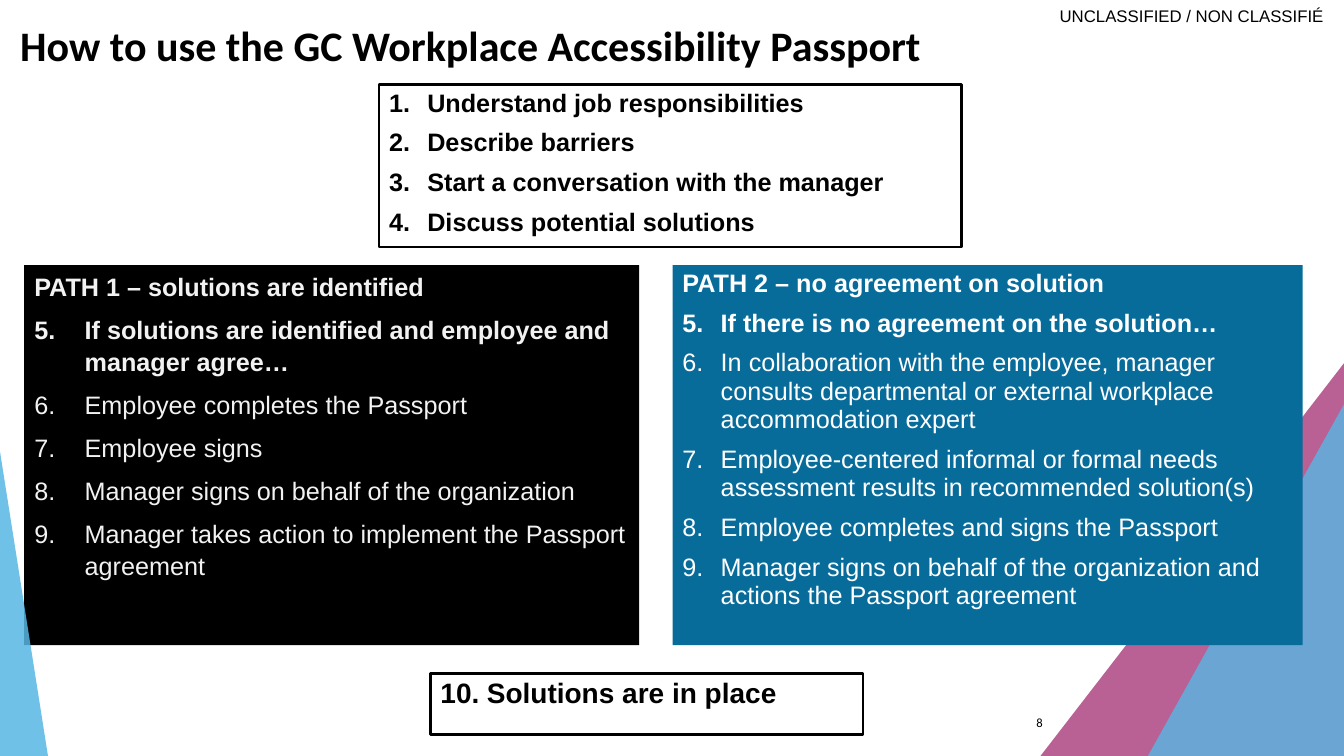
from lxml.etree import SubElement
from pptx import Presentation
from pptx.dml.color import RGBColor
from pptx.enum.shapes import MSO_SHAPE
from pptx.enum.text import MSO_ANCHOR, PP_ALIGN
from pptx.oxml.ns import qn
from pptx.util import Inches, Pt

WIDTH, HEIGHT = 13.33, 7.5
PATH_TOP, PATH_HEIGHT = 2.63, 3.77

TITLE = "How to use the GC Workplace Accessibility Passport"
CLASSIFICATION = "UNCLASSIFIED / NON CLASSIFIÉ"
PAGE = "8"

TRIANGLES = [
    ((10.25, 3.59, 3.09, 4), 1, "9E246B", 72),
    ((11.34, 4.01, 1.99, 3.57), 1, "58B7E3", 80),
    ((0, 4.48, 0.49, 3.11), 0, "58B7E3", 85),
]
FIRST_STEPS = [
    "Understand job responsibilities",
    "Describe barriers",
    "Start a conversation with the manager",
    "Discuss potential solutions",
]
AGREED_HEADING = "PATH 1 – solutions are identified"
AGREED_STEPS = [
    "If solutions are identified and employee and manager agree…",
    "Employee completes the Passport",
    "Employee signs",
    "Manager signs on behalf of the organization",
    "Manager takes action to implement the Passport agreement",
]
DISPUTED_HEADING = "PATH 2 – no agreement on solution"
DISPUTED_STEPS = [
    "If there is no agreement on the solution…",
    "In collaboration with the employee, manager consults departmental or external workplace "
    "accommodation expert",
    "Employee-centered informal or formal needs assessment results in recommended solution(s)",
    "Employee completes and signs the Passport",
    "Manager signs on behalf of the organization and actions the Passport agreement",
]
LAST_STEP = "Solutions are in place"


def rgb(code):
    return RGBColor.from_string(code)


def place(part, box):
    part.left, part.top, part.width, part.height = map(Inches, box)


def write(paragraph, text, size=18, font="Arial", color="000000", bold=False,
          align=PP_ALIGN.LEFT, spacing=1.0, after=0, number=None, indent=0):
    run = paragraph.add_run()
    run.text = text
    run.font.size, run.font.name, run.font.bold = Pt(size), font, bold
    run.font.color.rgb = rgb(color)
    paragraph.alignment, paragraph.line_spacing = align, spacing
    paragraph.space_before, paragraph.space_after = Pt(0), Pt(after)
    properties = paragraph._p.get_or_add_pPr()
    properties.set("marL", str(Inches(indent)))
    properties.set("indent", str(-Inches(indent)))
    if number is None:
        SubElement(properties, qn("a:buNone"))
    else:
        SubElement(properties, qn("a:buFont"), typeface="Arial")
        SubElement(properties, qn("a:buAutoNum"), type="arabicPeriod", startAt=str(number))


def write_steps(frame, steps, start=1, heading=None, bold_steps=None, **style):
    frame.word_wrap = True
    frame.vertical_anchor = MSO_ANCHOR.TOP
    lines = [(step, start, bold_steps is None or place_in_list < bold_steps)
             for place_in_list, step in enumerate(steps)]
    if heading:
        lines.insert(0, (heading, None, True))
    indent = style.pop("indent", 0.38)
    for position, (text, number, bold) in enumerate(lines):
        paragraph = frame.add_paragraph() if position else frame.paragraphs[0]
        write(paragraph, text, number=number, bold=bold, after=8,
              indent=0 if number is None else indent, **style)


def add_panel(box, fill=None, line=None, preset=MSO_SHAPE.RECTANGLE):
    panel = slide.shapes.add_shape(preset, *map(Inches, box))
    panel.shadow.inherit = False
    if fill:
        panel.fill.solid()
        panel.fill.fore_color.rgb = rgb(fill)
    else:
        panel.fill.background()
    if line:
        panel.line.color.rgb = rgb(line)
        panel.line.width = Pt(2)
    else:
        panel.line.fill.background()
    return panel


def add_label(box, text, inset=0.0, **style):
    frame = slide.shapes.add_textbox(*map(Inches, box)).text_frame
    frame.word_wrap = True
    frame.vertical_anchor = MSO_ANCHOR.MIDDLE
    frame.margin_left = frame.margin_right = Inches(inset)
    frame.margin_top = frame.margin_bottom = Inches(inset / 2)
    write(frame.paragraphs[0], text, align=PP_ALIGN.RIGHT, **style)


deck = Presentation()
deck.slide_width, deck.slide_height = Inches(WIDTH), Inches(HEIGHT)
slide = deck.slides.add_slide(deck.slide_layouts[1])

for box, apex, color, opacity in TRIANGLES:
    triangle = add_panel(box, fill=color, preset=MSO_SHAPE.ISOSCELES_TRIANGLE)
    triangle.adjustments[0] = apex
    tint = triangle.fill._xPr.find(".//" + qn("a:srgbClr"))
    SubElement(tint, qn("a:alpha"), val=str(opacity * 1000))

add_label((10.31, 0, WIDTH - 10.31 - 0.2, 0.31), CLASSIFICATION, size=12)

title = slide.shapes.title
place(title, (0.1, 0.21, 12.63, 0.54))
title.text_frame.vertical_anchor = MSO_ANCHOR.BOTTOM
write(title.text_frame.paragraphs[0], TITLE, size=30, font="Calibri", bold=True, spacing=0.9)

first = add_panel((3.76, 0.84, 5.78, 1.61), line="000000")
write_steps(first.text_frame, FIRST_STEPS, spacing=0.94)

agreed = slide.placeholders[1]
place(agreed, (0.24, PATH_TOP, 6.1, PATH_HEIGHT))
agreed.fill.solid()
agreed.fill.fore_color.rgb = rgb("000000")
write_steps(agreed.text_frame, AGREED_STEPS, start=5, heading=AGREED_HEADING, bold_steps=1,
            color="F2F2F2", spacing=1.05, indent=0.5)

disputed = add_panel((6.67, PATH_TOP, 6.25, PATH_HEIGHT), fill="086C9B")
write_steps(disputed.text_frame, DISPUTED_STEPS, start=5, heading=DISPUTED_HEADING, bold_steps=1,
            color="FFFFFF", spacing=0.94)

last = add_panel((4.27, 6.68, 4.29, 0.61), line="000000")
write_steps(last.text_frame, [LAST_STEP], start=10, size=20, spacing=0.94, indent=0.46)

add_label((9.69, 6.97, 0.75, 0.4), PAGE, inset=0.1, size=9, font="Calibri")

deck.save("out.pptx")
